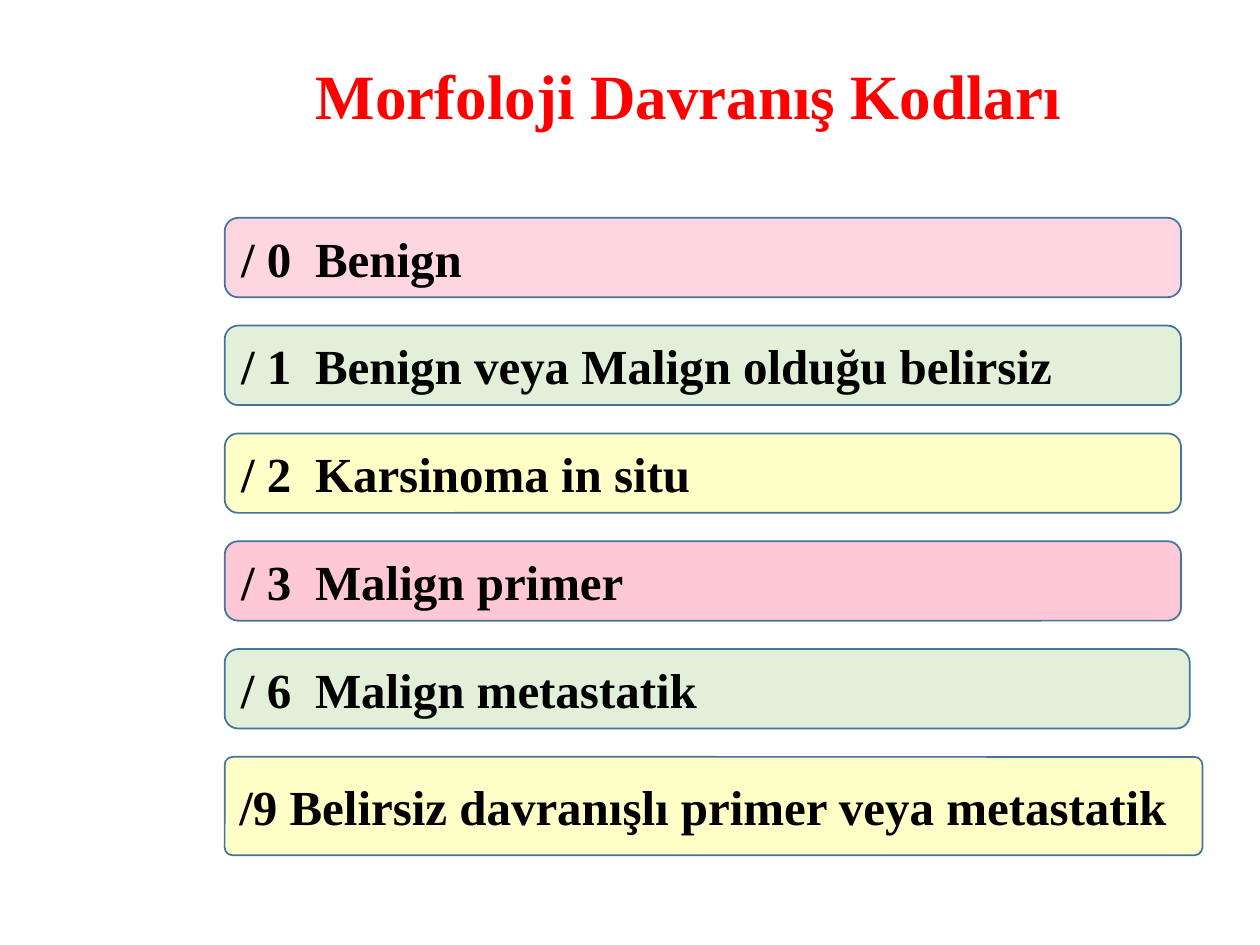
from lxml.etree import SubElement
from pptx import Presentation
from pptx.dml.color import RGBColor
from pptx.enum.shapes import MSO_SHAPE
from pptx.enum.text import MSO_ANCHOR, MSO_AUTO_SIZE, PP_ALIGN
from pptx.oxml.ns import qn
from pptx.util import Pt

COLORS = {
    "title": "FF0000",
    "text": "000000",
    "outline": "43739E",
    "pale pink": "FED6E1",
    "pink": "FEC8D7",
    "green": "E2F0D9",
    "yellow": "FFFFC7",
}
LEFT, FIRST_TOP, PITCH = 128.4, 124.5, 61.6
CODE_TAB = 42.3

# Text, fill, width, height, corner radius as a share of the height
BEHAVIOUR_CODES = [
    ("/ 0\tBenign", "pale pink", 546.5, 45.4, 0.17),
    ("/ 1\tBenign veya Malign olduğu belirsiz", "green", 546.5, 45.4, 0.17),
    ("/ 2\tKarsinoma in situ", "yellow", 546.5, 45.4, 0.17),
    ("/ 3\tMalign primer", "pink", 546.5, 45.4, 0.17),
    ("/ 6\tMalign metastatik", "green", 551.5, 45.4, 0.17),
    ("/9 Belirsiz davranışlı primer veya metastatik", "yellow", 558.7, 56.2, 0.08),
]


def rgb(name):
    return RGBColor.from_string(COLORS[name])


class SlideBuilder:
    """Holds the text style and the page being filled."""

    font_name = "Times New Roman"

    def __init__(self, page):
        self.page = page

    def style(self, paragraph, size, color):
        for span in paragraph.runs:
            span.font.name = self.font_name
            span.font.size = Pt(size)
            span.font.bold = True
            span.font.color.rgb = rgb(color)

    def title(self, text, left, top, width, height):
        box = self.page.shapes.title
        box.left, box.top, box.width, box.height = map(Pt, (left, top, width, height))
        frame = box.text_frame
        frame.text = text
        frame.auto_size = MSO_AUTO_SIZE.NONE
        frame.vertical_anchor = MSO_ANCHOR.MIDDLE
        frame.margin_bottom = Pt(16)
        para = frame.paragraphs[0]
        para.alignment = PP_ALIGN.CENTER
        para.line_spacing = 0.9
        self.style(para, 36, "title")

    def bar(self, text, fill, left, top, width, height, corner):
        box = self.page.shapes.add_shape(
            MSO_SHAPE.ROUNDED_RECTANGLE, Pt(left), Pt(top), Pt(width), Pt(height))
        box.adjustments[0] = corner
        box.shadow.inherit = False
        box.fill.solid()
        box.fill.fore_color.rgb = rgb(fill)
        box.line.color.rgb = rgb("outline")
        box.line.width = Pt(1)
        frame = box.text_frame
        frame.text = text
        frame.word_wrap = True
        frame.vertical_anchor = MSO_ANCHOR.MIDDLE
        para = frame.paragraphs[0]
        para.alignment = PP_ALIGN.LEFT
        if "\t" in text:
            self.tab_stop(para, CODE_TAB)
        self.style(para, 28, "text")

    def tab_stop(self, paragraph, position):
        properties = paragraph._p.get_or_add_pPr()
        stops = SubElement(properties, qn("a:tabLst"))
        SubElement(stops, qn("a:tab"), pos=str(Pt(position)), algn="l")


def main():
    deck = Presentation()
    deck.slide_width, deck.slide_height = Pt(720), Pt(540)
    builder = SlideBuilder(deck.slides.add_slide(deck.slide_layouts[5]))
    builder.title("Morfoloji Davranış Kodları", 83.5, 30.2, 620, 64.8)
    for row, (text, fill, width, height, corner) in enumerate(BEHAVIOUR_CODES):
        builder.bar(text, fill, LEFT, FIRST_TOP + row * PITCH, width, height, corner)
    deck.save("out.pptx")


if __name__ == "__main__":
    main()
